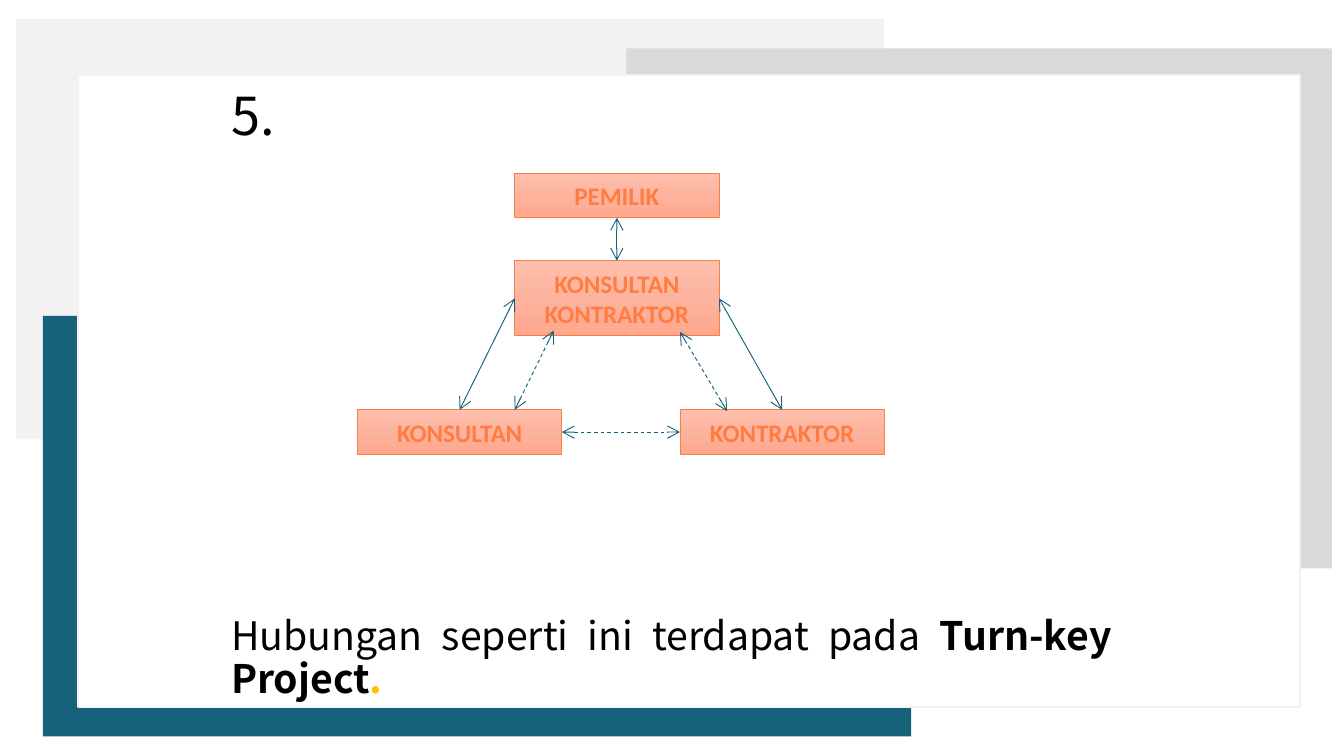
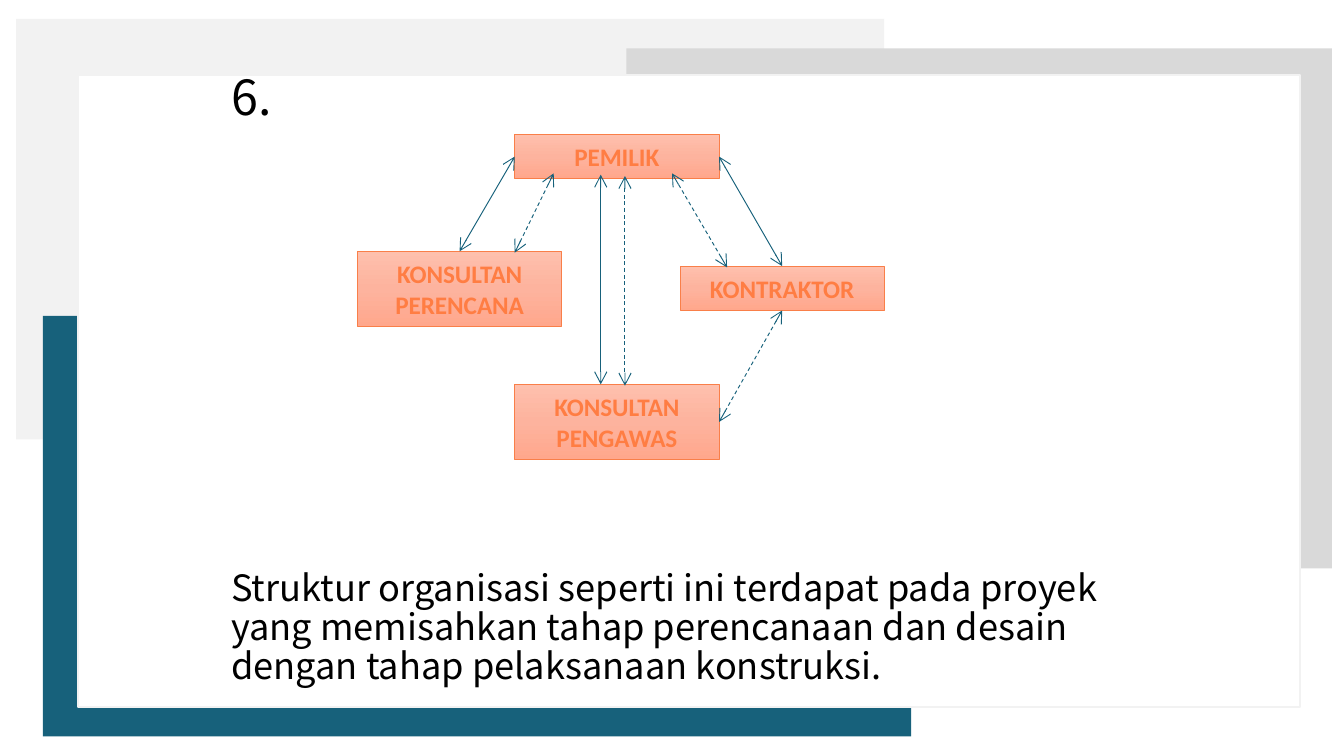
from lxml import etree
from pptx import Presentation
from pptx.dml.color import RGBColor
from pptx.enum.dml import MSO_LINE
from pptx.enum.shapes import MSO_CONNECTOR, MSO_SHAPE
from pptx.enum.text import MSO_ANCHOR, MSO_AUTO_SIZE, PP_ALIGN
from pptx.oxml.ns import qn
from pptx.util import Inches, Pt

INK = {
    "pale": "F2F2F2", "gray": "D9D9D9", "teal": "17617B", "white": "FFFFFF",
    "black": "000000", "gold": "FFC000", "edge": "F97F49", "rim": "C55929",
}
FONT = "Noto Sans CJK SC"
BOX_FILL = [(0, "FEC0AD"), (50, "FDB39E"), (100, "FFA78C")]
TEXT_FILL = [(0, "A03100"), (43, "FF7D43"), (48, "FF6D2D"), (100, "A03100")]

# Backdrop panels: left, top, width, height, colour
PANELS = [
    (0.12, 0.14, 6.46, 3.13, "pale"),
    (4.66, 0.36, 5.25, 3.87, "gray"),
    (0.32, 2.35, 6.46, 3.13, "teal"),
    (0.58, 0.56, 9.09, 4.7, "white"),
]

WIDE, LOW, TALL = 1.52, 0.33, 0.56
LEFT, MID, RIGHT = 2.66, 3.83, 5.06

# Boxes: text -> left, top, height
# Links: two ends and a dashed flag; an end is (box, side) or (x, y)
CHARTS = [
    {
        "number": "5.", "top": 0.62, "height": 4.67, "big": 28, "small": 21,
        "gap": 252, "align": PP_ALIGN.JUSTIFY,
        "runs": [
            ("Hubungan seperti ini terdapat pada ", False, "black"),
            ("Turn-key Project", True, "black"),
            (".", True, "gold"),
        ],
        "boxes": {
            "KONSULTAN KONTRAKTOR": (MID, 1.94, TALL),
            "KONSULTAN": (LEFT, 3.05, LOW),
            "KONTRAKTOR": (RIGHT, 3.05, LOW),
            "PEMILIK": (MID, 1.29, LOW),
        },
        "links": [
            (("KONSULTAN", 0), ("KONSULTAN KONTRAKTOR", 1), False),
            (("KONSULTAN KONTRAKTOR", 3), ("KONTRAKTOR", 0), False),
            ((3.83, 3.05), (4.12, 2.46), True),
            (("KONSULTAN", 3), ("KONTRAKTOR", 1), True),
            (("PEMILIK", 2), ("KONSULTAN KONTRAKTOR", 0), False),
            ((5.41, 3.06), (5.06, 2.47), True),
        ],
    },
    {
        "number": "6.", "top": 0.5, "height": 4.79, "big": 25.9, "small": 19.4,
        "gap": 238, "align": PP_ALIGN.LEFT,
        "runs": [
            ("Struktur organisasi seperti ini terdapat pada proyek yang "
             "memisahkan tahap perencanaan dan desain dengan tahap "
             "pelaksanaan konstruksi.", False, "black"),
        ],
        "boxes": {
            "PEMILIK": (MID, 1, LOW),
            "KONSULTAN PERENCANA": (LEFT, 1.87, TALL),
            "KONTRAKTOR": (RIGHT, 1.98, LOW),
            "KONSULTAN PENGAWAS": (MID, 2.86, TALL),
        },
        "links": [
            (("KONSULTAN PERENCANA", 0), ("PEMILIK", 1), False),
            (("PEMILIK", 3), ("KONTRAKTOR", 0), False),
            ((3.83, 1.88), (4.12, 1.29), True),
            (("KONSULTAN PENGAWAS", 3), ("KONTRAKTOR", 2), True),
            ((5.41, 1.99), (5, 1.29), True),
            ((4.47, 1.3), (4.47, 2.86), False),
            ((4.65, 1.31), (4.65, 2.87), True),
        ],
    },
]


def tint(name):
    return RGBColor.from_string(INK[name])


def shade(fill, props, stops):
    """Give the fill held by props a downward gradient of (percent, hex) stops."""
    fill.gradient()
    fill.gradient_angle = 270
    steps = props.find(qn("a:gradFill")).find(qn("a:gsLst"))
    for step in list(steps):
        steps.remove(step)
    for spot, color in stops:
        step = etree.SubElement(steps, qn("a:gs"), pos=str(spot * 1000))
        etree.SubElement(step, qn("a:srgbClr"), val=color)


deck = Presentation()
deck.slide_width = Inches(10)
deck.slide_height = deck.slide_width * 9 // 16

for chart in CHARTS:
    slide = deck.slides.add_slide(deck.slide_layouts[1])
    title = slide.shapes.title._element
    title.getparent().remove(title)

    # Backdrop, behind everything else
    group = slide.shapes.add_group_shape()
    for left, top, width, height, color in PANELS:
        panel = group.shapes.add_shape(
            MSO_SHAPE.RECTANGLE, Inches(left), Inches(top), Inches(width), Inches(height))
        panel.shadow.inherit = False
        panel.fill.solid()
        panel.fill.fore_color.rgb = tint(color)
        if color == "white":
            panel.line.color.rgb = tint("pale")
            panel.line.width = Pt(1)
        else:
            panel.line.fill.background()
    slide.shapes._spTree.insert(2, group._element)

    # Number and statement
    body = slide.placeholders[1]
    body.left, body.top = Inches(1.62), Inches(chart["top"])
    body.width, body.height = Inches(6.75), Inches(chart["height"])
    frame = body.text_frame
    frame.auto_size = MSO_AUTO_SIZE.NONE
    frame.vertical_anchor = MSO_ANCHOR.TOP
    rows = [
        (frame.paragraphs[0], [(chart["number"], False, "black")],
         chart["big"], 10, PP_ALIGN.LEFT),
        (frame.add_paragraph(), chart["runs"],
         chart["small"], chart["gap"], chart["align"]),
    ]
    for para, runs, size, gap, align in rows:
        para.alignment = align
        para.line_spacing = 0.9
        para.space_before = Pt(gap)
        props = para._p.get_or_add_pPr()
        props.set("marL", "0")
        props.set("indent", "0")
        etree.SubElement(props, qn("a:buNone"))
        for text, bold, color in runs:
            run = para.add_run()
            run.text = text
            run.font.name, run.font.size, run.font.bold = FONT, Pt(size), bold
            run.font.color.rgb = tint(color)

    # Parties
    boxes = {}
    for name, (left, top, height) in chart["boxes"].items():
        box = slide.shapes.add_shape(
            MSO_SHAPE.RECTANGLE, Inches(left), Inches(top), Inches(WIDE), Inches(height))
        boxes[name] = box
        box.shadow.inherit = False
        shade(box.fill, box._element.spPr, BOX_FILL)
        box.line.color.rgb = tint("edge")
        box.line.width = Pt(0.5)
        box.text_frame.text = name
        box.text_frame.word_wrap = True
        box.text_frame.auto_size = MSO_AUTO_SIZE.SHAPE_TO_FIT_TEXT
        para = box.text_frame.paragraphs[0]
        para.alignment = PP_ALIGN.CENTER
        run = para.runs[0]
        run.font.name, run.font.size, run.font.bold = "Calibri", Pt(13.5), True
        props = run._r.get_or_add_rPr()
        shade(run.font.fill, props, TEXT_FILL)
        rim = etree.Element(qn("a:ln"), w=str(Pt(0.71)))
        solid = etree.SubElement(rim, qn("a:solidFill"))
        etree.SubElement(solid, qn("a:srgbClr"), val=INK["rim"])
        props.insert(0, rim)

    # Relations
    for start, end, dashed in chart["links"]:
        link = slide.shapes.add_connector(MSO_CONNECTOR.STRAIGHT, 0, 0, 0, 0)
        if isinstance(start[0], str):
            link.begin_connect(boxes[start[0]], start[1])
        else:
            link.begin_x, link.begin_y = Inches(start[0]), Inches(start[1])
        if isinstance(end[0], str):
            link.end_connect(boxes[end[0]], end[1])
        else:
            link.end_x, link.end_y = Inches(end[0]), Inches(end[1])
        link.line.color.rgb = tint("teal")
        link.line.width = Pt(0.5)
        if dashed:
            link.line.dash_style = MSO_LINE.DASH
        line = link.line._get_or_add_ln()
        for tip in ("a:headEnd", "a:tailEnd"):
            etree.SubElement(line, qn(tip), type="arrow")
        etree.SubElement(link._element.spPr, qn("a:effectLst"))

deck.save("out.pptx")
